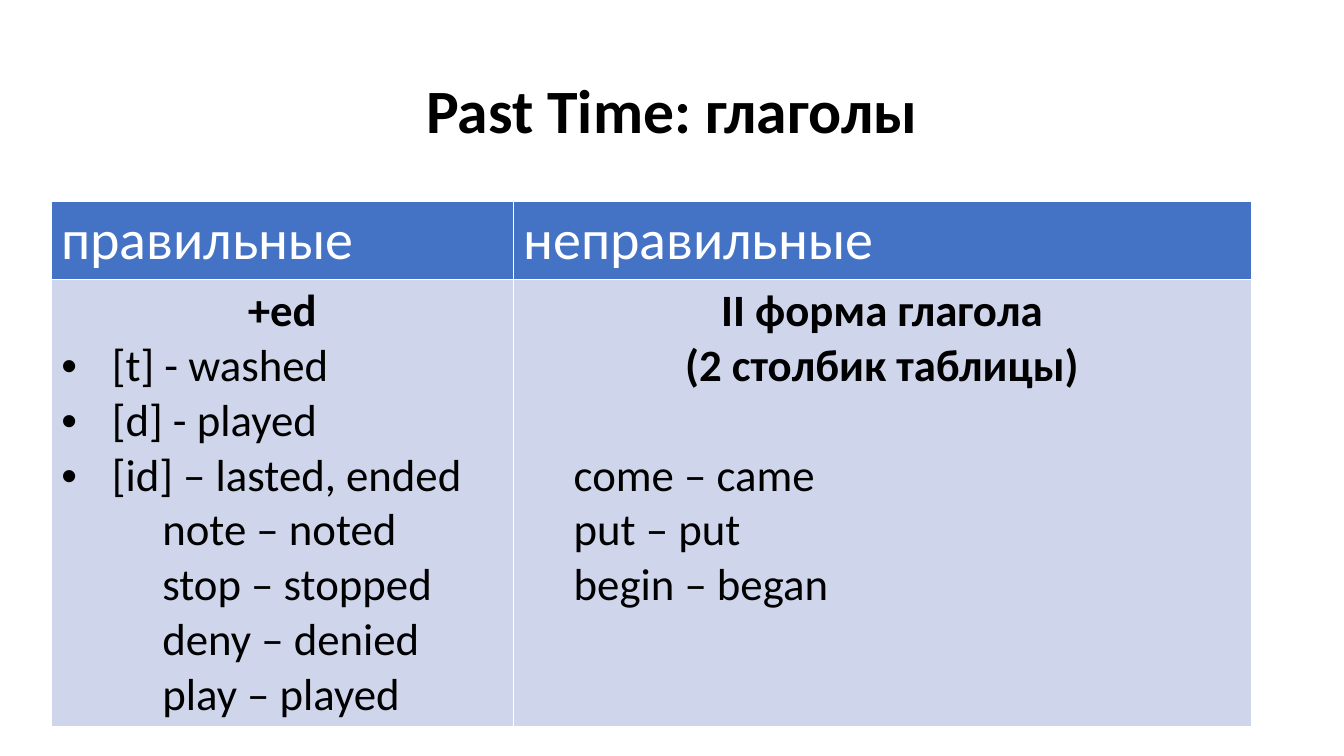
from dataclasses import dataclass

from lxml import etree
from pptx import Presentation
from pptx.dml.color import RGBColor
from pptx.enum.text import MSO_ANCHOR, PP_ALIGN
from pptx.oxml.ns import qn
from pptx.util import Inches, Pt

LEFT, CENTER = PP_ALIGN.LEFT, PP_ALIGN.CENTER
MIDDLE = MSO_ANCHOR.MIDDLE


@dataclass(frozen=True)
class Theme:
    font: str = "Calibri"
    ink: str = "000000"
    paper: str = "FFFFFF"
    head: str = "4472C4"
    body: str = "CFD5EA"
    title_size: int = 44
    head_size: int = 40
    body_size: int = 32
    rule: int = 1


THEME = Theme()
STYLES = {
    "title": {"size": Pt(THEME.title_size), "bold": True, "color": THEME.ink},
    "head": {"size": Pt(THEME.head_size), "bold": False, "color": THEME.paper},
    "lead": {"size": Pt(THEME.body_size), "bold": True, "color": THEME.ink},
    "body": {"size": Pt(THEME.body_size), "bold": False, "color": THEME.ink},
}
# Paragraph formats: text style, alignment, level, left margin in inches, bullet
KINDS = {
    "title": ("title", CENTER, 0, 0, False),
    "head": ("head", LEFT, 0, 0, False),
    "lead": ("lead", CENTER, 0, 0, False),
    "sound": ("body", LEFT, 0, 0.5, True),
    "verb": ("body", LEFT, 1, 0.5, False),
    "deep": ("body", LEFT, 2, 1, False),
}
COLS = (4.58, 7.32)
ROWS = (0.77, 4.44)
GAP = Pt(39)

HEADS = ("правильные", "неправильные")
REGULAR = (
    ("lead", ("+ed",)),
    ("sound", ("[t] - washed", "[d] - played", "[id] – lasted, ended")),
    ("deep", ("note – noted", "stop – stopped", "deny – denied",
              "play – played")),
)
IRREGULAR = (
    ("lead", ("II форма глагола", "(2 столбик таблицы)")),
    ("verb", ("come – came", "put – put", "begin – began")),
)


def add_bullet(props):
    etree.SubElement(props, qn("a:buFont"), typeface="Arial")
    etree.SubElement(props, qn("a:buChar"), char="•")


def write_line(para, text, kind):
    style, align, level, margin, bullet = KINDS[kind]
    para.alignment, para.level = align, level
    props = para._p.get_or_add_pPr()
    props.set("marL", str(Inches(margin)))
    props.set("indent", str(-Inches(margin) if bullet else 0))
    if bullet:
        add_bullet(props)
    run = para.add_run()
    run.text = text
    run.font.name = THEME.font
    for name, value in STYLES[style].items():
        if name == "color":
            run.font.color.rgb = RGBColor.from_string(value)
        else:
            setattr(run.font, name, value)


def write_groups(frame, groups):
    """Write each group of lines in its own paragraph format."""
    lines = [(kind, text) for kind, texts in groups for text in texts]
    for i, (kind, text) in enumerate(lines):
        para = frame.add_paragraph() if i else frame.paragraphs[0]
        if kind == "verb" and lines[i - 1][0] == "lead":
            para.space_before = GAP
        write_line(para, text, kind)


def paint_cell(cell, color):
    props = cell._tc.get_or_add_tcPr()
    for side in ("lnL", "lnR", "lnT", "lnB"):
        line = etree.SubElement(props, qn(f"a:{side}"),
                                w=str(Pt(THEME.rule)))
        fill = etree.SubElement(line, qn("a:solidFill"))
        etree.SubElement(fill, qn("a:srgbClr"), val=THEME.paper)
    cell.fill.solid()
    cell.fill.fore_color.rgb = RGBColor.from_string(color)


def add_title(slide, text):
    box = slide.shapes.add_textbox(Inches(0.92), Inches(0.4),
                                   Inches(11.5), Inches(1.45))
    frame = box.text_frame
    frame.word_wrap = True
    frame.vertical_anchor = MIDDLE
    para = frame.paragraphs[0]
    para.line_spacing = 0.9
    write_line(para, text, "title")


def add_verbs(slide, rows):
    table = slide.shapes.add_table(
        len(ROWS), len(COLS), Inches(0.51), Inches(2),
        Inches(sum(COLS)), Inches(sum(ROWS))).table
    table.first_row = table.horz_banding = False
    for col, width in zip(table.columns, COLS):
        col.width = Inches(width)
    for row, height, (color, cells) in zip(table.rows, ROWS, rows):
        row.height = Inches(height)
        for cell, groups in zip(row.cells, cells):
            paint_cell(cell, color)
            write_groups(cell.text_frame, groups)


def main():
    deck = Presentation()
    deck.slide_width, deck.slide_height = Inches(13.33), Inches(7.5)
    slide = deck.slides.add_slide(deck.slide_layouts[6])
    add_title(slide, "Past Time: глаголы")
    heads = [[("head", (text,))] for text in HEADS]
    add_verbs(slide, ((THEME.head, heads),
                      (THEME.body, (REGULAR, IRREGULAR))))
    deck.save("out.pptx")


if __name__ == "__main__":
    main()
